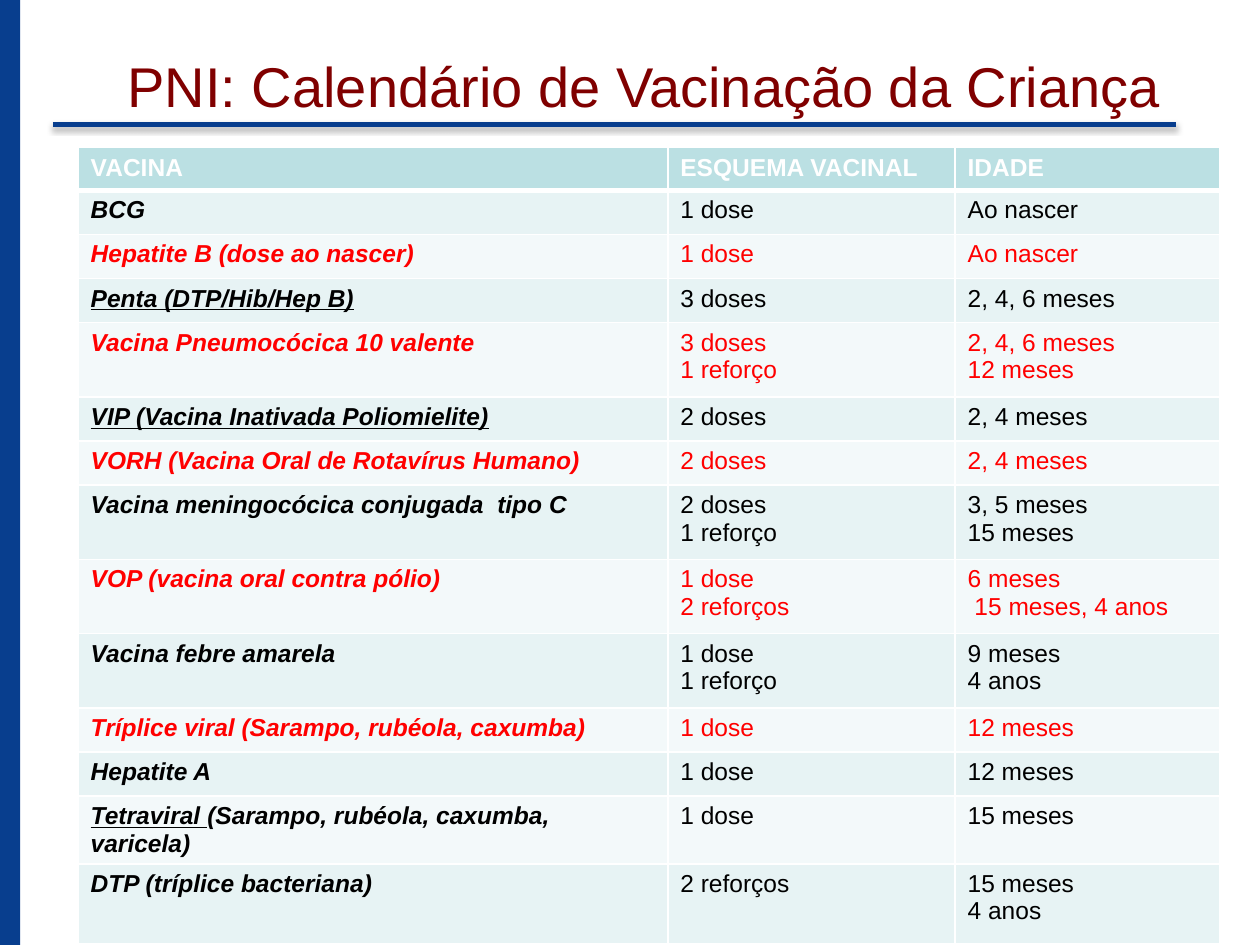
from typing import NamedTuple

import pptx
import pptx.oxml
import pptx.util
from pptx.dml.color import RGBColor
from pptx.enum.shapes import MSO_CONNECTOR, MSO_SHAPE
from pptx.enum.text import MSO_ANCHOR, PP_ALIGN
from pptx.oxml.ns import nsdecls, qn
from pptx.util import Inches, Pt

BLUE = RGBColor(0x08, 0x3E, 0x8E)
MAROON = RGBColor(0x80, 0x00, 0x00)
WHITE = RGBColor(0xFF, 0xFF, 0xFF)
BLACK = RGBColor(0x00, 0x00, 0x00)
RED = RGBColor(0xFF, 0x00, 0x00)
HEADER_FILL = RGBColor(0xBB, 0xE0, 0xE3)
BAND_FILLS = (RGBColor(0xE7, 0xF3, 0xF4), RGBColor(0xF3, 0xF9, 0xFA))
FONT = "Arial"


class Vaccine(NamedTuple):
    name: str
    doses: str
    ages: str
    color: RGBColor = BLACK
    underlined: str = ""  # leading part of the name, drawn underlined
    height: float = 0.35


TALL = 0.59
HEADERS = ("VACINA", "ESQUEMA VACINAL", "IDADE")
COL_WIDTHS = (4.68, 2.28, 2.1)
HEADER_HEIGHT = 0.34
VACCINES = (
    Vaccine("BCG", "1 dose", "Ao nascer"),
    Vaccine("Hepatite B (dose ao nascer)", "1 dose", "Ao nascer", RED),
    Vaccine("", "3 doses", "2, 4, 6 meses", underlined="Penta (DTP/Hib/Hep B)"),
    Vaccine("Vacina Pneumocócica 10 valente", "3 doses\n1 reforço",
            "2, 4, 6 meses\n12 meses", RED, height=TALL),
    Vaccine("", "2 doses", "2, 4 meses",
            underlined="VIP (Vacina Inativada Poliomielite)"),
    Vaccine("VORH (Vacina Oral de Rotavírus Humano)", "2 doses", "2, 4 meses", RED),
    Vaccine("Vacina meningocócica conjugada  tipo C", "2 doses\n1 reforço",
            "3, 5 meses\n15 meses", height=TALL),
    Vaccine("VOP (vacina oral contra pólio)", "1 dose\n2 reforços",
            "6 meses\n 15 meses, 4 anos", RED, height=TALL),
    Vaccine("Vacina febre amarela", "1 dose\n1 reforço",
            "9 meses\n4 anos", height=TALL),
    Vaccine("Tríplice viral (Sarampo, rubéola, caxumba)", "1 dose", "12 meses", RED),
    Vaccine("Hepatite A", "1 dose", "12 meses"),
    Vaccine("(Sarampo, rubéola, caxumba, varicela)", "1 dose", "15 meses",
            underlined="Tetraviral "),
    Vaccine("DTP (tríplice bacteriana)", "2 reforços", "15 meses\n4 anos",
            height=0.63),
)


def add_run(p, text: str, size: float, color: RGBColor, bold: bool = False,
            italic: bool = False, underline: bool = False) -> None:
    r = p.add_run()
    r.text = text
    font = r.font
    font.name, font.size = FONT, Pt(size)
    font.bold, font.italic, font.underline = bold, italic, underline
    font.color.rgb = color


def add_lines(cell, text: str, color: RGBColor, bold: bool = False) -> None:
    tf = cell.text_frame
    for i, line in enumerate(text.split("\n")):
        p = tf.add_paragraph() if i else tf.paragraphs[0]
        add_run(p, line, 14, color, bold)


def style_cell(cell, fill: RGBColor, top: float = 1, bottom: float = 1) -> None:
    """White borders (widths in points), then the fill."""
    tc_pr = cell._tc.get_or_add_tcPr()
    for side, width in (("L", 1), ("R", 1), ("T", top), ("B", bottom)):
        tc_pr.append(pptx.oxml.parse_xml(
            f'<a:ln{side} {nsdecls("a")} w="{Pt(width)}"><a:solidFill>'
            f'<a:srgbClr val="{WHITE}"/></a:solidFill></a:ln{side}>'))
    cell.fill.solid()
    cell.fill.fore_color.rgb = fill


def add_title(s) -> None:
    sp = s.shapes.title
    sp.left, sp.top = Inches(0.39), Inches(0.31)
    sp.width, sp.height = Inches(9.45), Inches(0.94)
    tf = sp.text_frame
    tf.word_wrap = True
    tf.vertical_anchor = MSO_ANCHOR.TOP
    tf.margin_top = Inches(0.1)
    p = tf.paragraphs[0]
    p.alignment = PP_ALIGN.CENTER
    add_run(p, "PNI: Calendário de Vacinação da Criança", 32, MAROON)


def add_side_bar(s) -> None:
    sp = s.shapes.add_shape(MSO_SHAPE.RECTANGLE, 0, 0, Inches(0.16), Inches(7.5))
    sp.shadow.inherit = False
    sp.fill.solid()
    sp.fill.fore_color.rgb = BLUE
    sp.line.fill.background()


def add_title_rule(s) -> None:
    y = Inches(0.99)
    line = s.shapes.add_connector(MSO_CONNECTOR.STRAIGHT,
                                  Inches(0.42), y, Inches(9.33), y)
    line.line.color.rgb = BLUE
    line.line.width = Pt(3)
    line._element.find(qn("p:spPr")).append(pptx.oxml.parse_xml(
        f'<a:effectLst {nsdecls("a")}><a:outerShdw blurRad="{Pt(3.1)}" '
        f'dist="{Pt(1.8)}" dir="5400000" rotWithShape="0"><a:srgbClr val="{BLACK}">'
        '<a:alpha val="35000"/></a:srgbClr></a:outerShdw></a:effectLst>'))


def add_vaccine_table(s) -> None:
    heights = [HEADER_HEIGHT] + [v.height for v in VACCINES]
    table = s.shapes.add_table(
        len(heights), len(COL_WIDTHS), Inches(0.62), Inches(1.17),
        Inches(sum(COL_WIDTHS)), Inches(sum(heights))).table
    for column, width in zip(table.columns, COL_WIDTHS):
        column.width = Inches(width)
    for row, height in zip(table.rows, heights):
        row.height = Inches(height)

    for col, header in enumerate(HEADERS):
        cell = table.cell(0, col)
        style_cell(cell, HEADER_FILL, bottom=3)
        add_lines(cell, header, WHITE, bold=True)

    for row, v in enumerate(VACCINES, start=1):
        cells = [table.cell(row, col) for col in range(len(COL_WIDTHS))]
        for cell in cells:
            style_cell(cell, BAND_FILLS[(row - 1) % 2], top=3 if row == 1 else 1)
        p = cells[0].text_frame.paragraphs[0]
        for text, underline in ((v.underlined, True), (v.name, False)):
            if text:
                add_run(p, text, 14, v.color, True, True, underline)
        add_lines(cells[1], v.doses, v.color)
        add_lines(cells[2], v.ages, v.color)


def main() -> None:
    prs = pptx.Presentation()
    prs.slide_width, prs.slide_height = Inches(10), Inches(7.5)
    s = prs.slides.add_slide(prs.slide_layouts[5])  # title only
    add_side_bar(s)
    add_title_rule(s)
    add_title(s)
    add_vaccine_table(s)
    prs.save("out.pptx")


if __name__ == "__main__":
    main()
